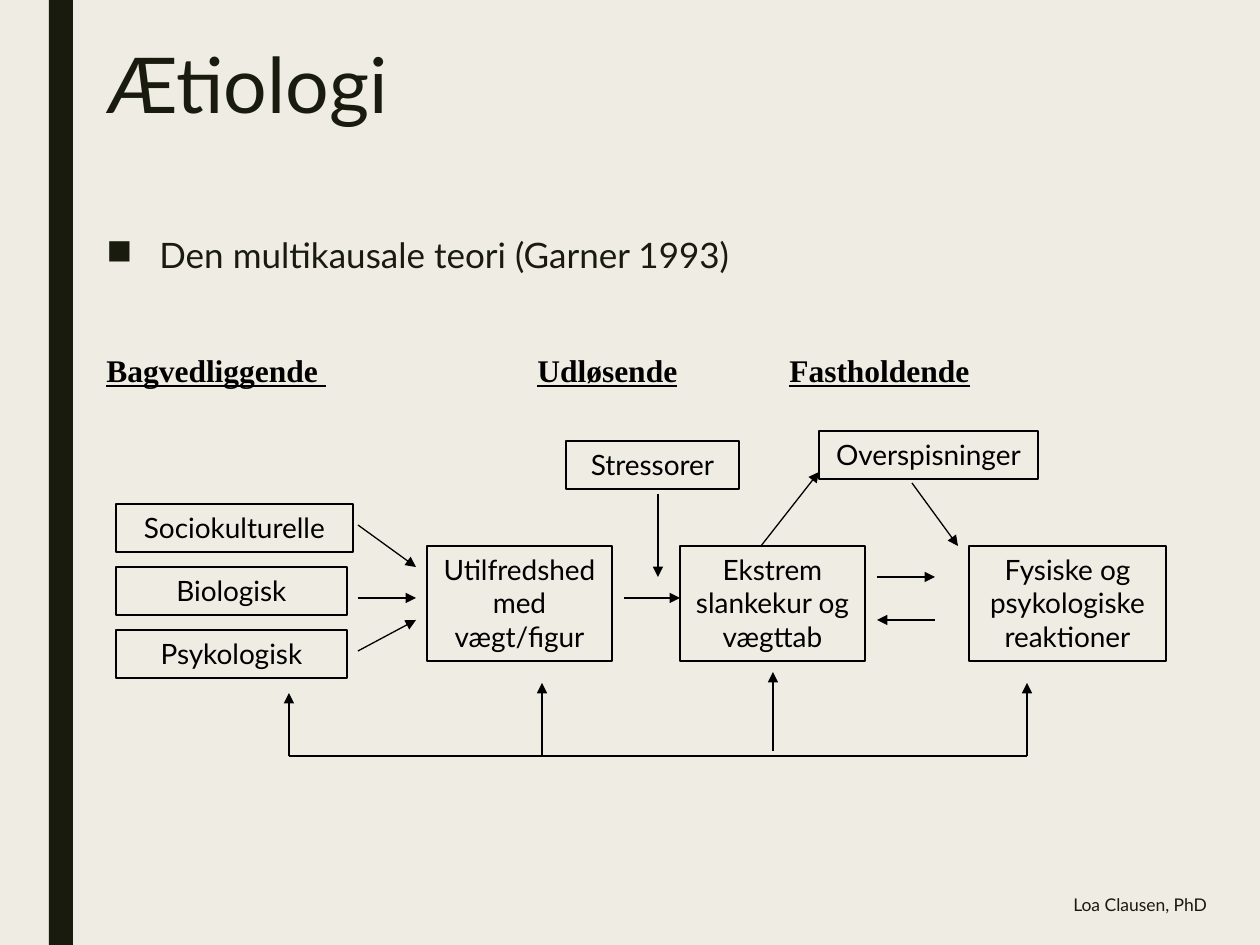
from dataclasses import dataclass

from lxml import etree
from pptx import Presentation
from pptx import util as u
from pptx.dml.color import RGBColor
from pptx.enum import shapes, text
from pptx.oxml import ns

SCALE = 914400 / 126


@dataclass(frozen=True)
class Theme:
    paper: str = "EFEDE3"
    ink: str = "191B0E"
    black: str = "000000"
    sans: str = "Lato"
    serif: str = "Times New Roman"
    title: int = 44
    body: int = 20
    head: int = 18
    label: int = 16
    foot: int = 10
    line: float = 0.75


LOOK = Theme()

LABELS = [
    ("Sociokulturelle", 116, 504, 237, 48),
    ("Biologisk", 116, 567, 231, 48),
    ("Psykologisk", 116, 630, 231, 48),
    ("Utilfredshed med vægt/figur", 427, 546, 185, 115),
    ("Ekstrem slankekur og vægttab", 680, 546, 185, 115),
    ("Fysiske og psykologiske reaktioner", 969, 546, 197, 115),
    ("Stressorer", 566, 441, 173, 48),
    ("Overspisninger", 819, 431, 219, 48),
]

ARROWS = [
    (358, 525, 416, 567),
    (358, 598, 416, 598),
    (358, 651, 416, 620),
    (624, 598, 680, 598),
    (658, 494, 658, 577),
    (761, 546, 819, 472),
    (912, 483, 958, 546),
    (877, 577, 935, 577),
    (935, 620, 877, 620),
    (289, 756, 289, 693),
    (542, 756, 542, 683),
    (773, 751, 773, 672),
    (1027, 756, 1027, 683),
]


def px(*nums):
    """Turn pixels into EMU."""
    return [u.Emu(round(n * SCALE)) for n in nums]


def rgb(code):
    """Return a colour from its hex code."""
    return RGBColor.from_string(code)


def tag(node, name, **attrs):
    """Add a DrawingML child to an XML node."""
    return etree.SubElement(node, ns.qn(name), **attrs)


def style(para, size, color, face=LOOK.sans):
    """Set the font of a paragraph."""
    font = para.font
    font.size, font.name = u.Pt(size), face
    font.color.rgb = rgb(color)


def add_text(slide, words, at, size, space=1.0, anchor=text.MSO_ANCHOR.TOP):
    """Add a wrapped text box and return its frame."""
    frame = slide.shapes.add_textbox(*px(*at)).text_frame
    frame.word_wrap, frame.vertical_anchor = True, anchor
    para = frame.paragraphs[0]
    para.text, para.line_spacing = words, space
    style(para, size, LOOK.ink)
    return frame


def add_body(slide):
    """Add the bullet and the row of column heads below it."""
    words = "Den multikausale teori (Garner 1993)"
    frame = add_text(slide, words, (94, 231, 1071, 609), LOOK.body, 0.94)
    props = frame.paragraphs[0]._p.get_or_add_pPr()
    mark = etree.Element(ns.qn("a:buChar"), char="■")
    props.insert_element_before(mark, "a:tabLst", "a:defRPr")
    left = px(53)[0]
    props.set("marL", str(left))
    props.set("indent", str(-left))

    row = frame.add_paragraph()
    row.line_spacing, row.space_before = 0.94, u.Pt(44)
    stops = tag(row._p.get_or_add_pPr(), "a:tabLst")
    for stop in px(431, 683):
        tag(stops, "a:tab", pos=str(stop), algn="l")
    style(row, LOOK.head, LOOK.black, LOOK.serif)
    row.font.bold = True
    for part in ("Bagvedliggende ", "\t", "Udløsende", "\t", "Fastholdende"):
        run = row.add_run()
        run.text = part
        run.font.underline = part != "\t"


def add_rect(slide, at):
    """Add a plain rectangle without shadow."""
    rect = slide.shapes.add_shape(shapes.MSO_SHAPE.RECTANGLE, *px(*at))
    rect.shadow.inherit = False
    return rect


def add_bar(slide):
    """Add the dark side bar."""
    bar = add_rect(slide, (49, 0, 24, 945))
    bar.fill.solid()
    bar.fill.fore_color.rgb = rgb(LOOK.ink)
    bar.line.fill.background()


def add_label(slide, words, *at):
    """Add an outlined box with centred text."""
    box = add_rect(slide, at)
    box.fill.background()
    box.line.color.rgb = rgb(LOOK.black)
    box.line.width = u.Pt(LOOK.line)
    frame = box.text_frame
    frame.word_wrap, frame.vertical_anchor = True, text.MSO_ANCHOR.TOP
    para = frame.paragraphs[0]
    para.text, para.alignment = words, text.PP_ALIGN.CENTER
    style(para, LOOK.label, LOOK.black)


def add_line(slide, *ends, arrow=True):
    """Add a straight line, with an arrowhead at its end if wanted."""
    link = slide.shapes.add_connector(shapes.MSO_CONNECTOR.STRAIGHT, *px(*ends))
    link.line.color.rgb = rgb(LOOK.black)
    link.line.width = u.Pt(LOOK.line)
    if arrow:
        tag(link.line._get_or_add_ln(), "a:tailEnd", type="triangle")
    tag(link._element.spPr, "a:effectLst")


def main():
    """Build and save the slide."""
    deck = Presentation()
    deck.slide_width, deck.slide_height = px(1260, 945)
    slide = deck.slides.add_slide(deck.slide_layouts[6])
    back = slide.background.fill
    back.solid()
    back.fore_color.rgb = rgb(LOOK.paper)

    add_bar(slide)
    add_text(slide, "Ætiologi", (94, 42, 1071, 157), LOOK.title, 0.89)
    add_body(slide)
    for label in LABELS:
        add_label(slide, *label)
    for ends in ARROWS:
        add_line(slide, *ends)
    add_line(slide, 289, 756, 1027, 756, arrow=False)
    add_text(slide, "Loa Clausen, PhD", (1061, 880, 190, 50), LOOK.foot,
             anchor=text.MSO_ANCHOR.MIDDLE)
    deck.save("out.pptx")


if __name__ == "__main__":
    main()
